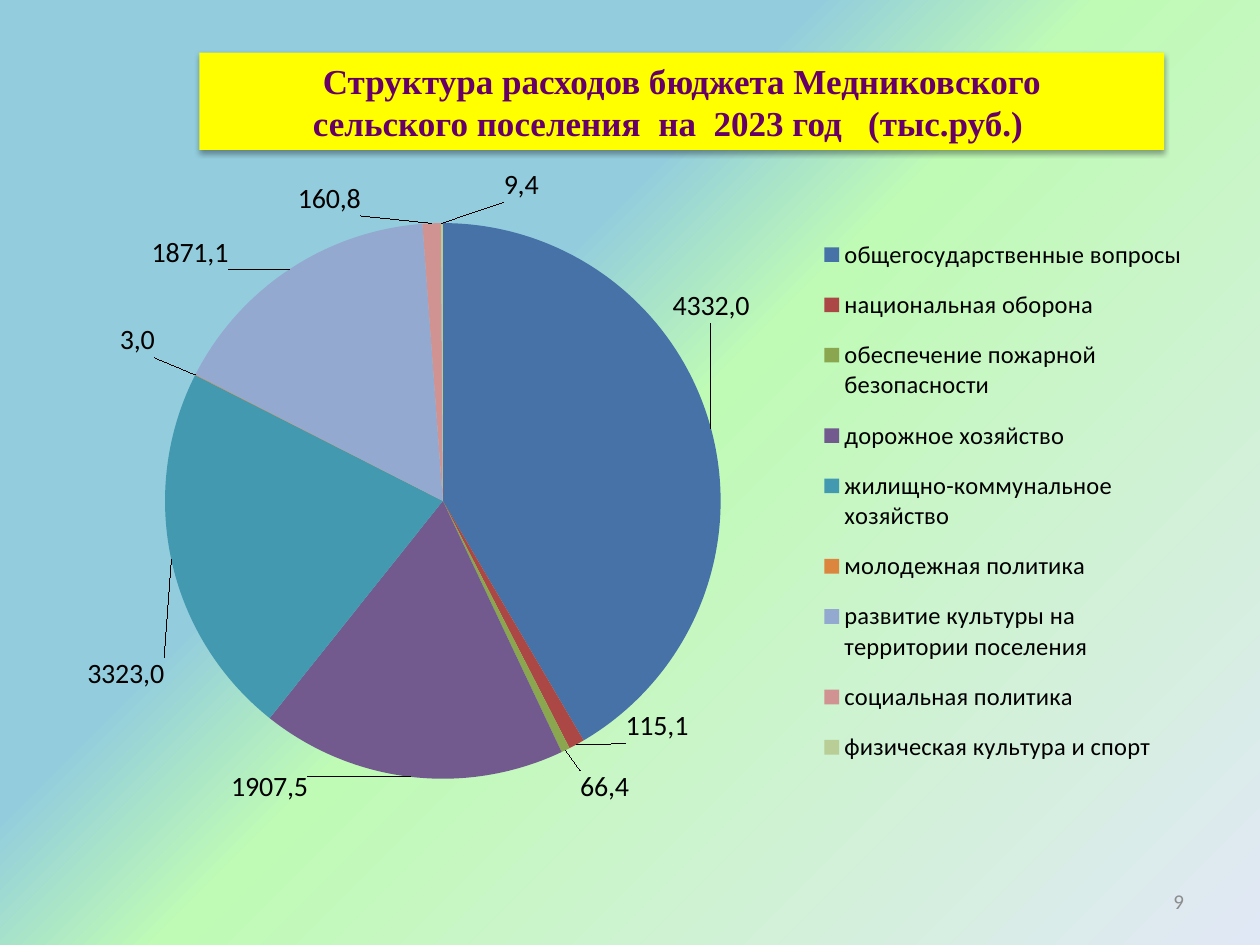
from copy import deepcopy

from lxml import etree
from pptx import Presentation
from pptx.chart.data import CategoryChartData as ChartData
from pptx.dml.color import RGBColor as RGB
from pptx.enum.chart import XL_CHART_TYPE as Kind
from pptx.enum.chart import XL_LABEL_POSITION as Spot
from pptx.enum.chart import XL_LEGEND_POSITION as Side
from pptx.enum.text import MSO_ANCHOR as Anchor
from pptx.enum.text import PP_ALIGN as Align
from pptx.oxml import parse_xml
from pptx.oxml.ns import qn
from pptx.util import Cm, Pt

BLACK = RGB(0, 0, 0)
GREY = RGB(0x8C, 0x8C, 0x8C)
YELLOW = RGB(0xFF, 0xFF, 0x00)
PLUM = RGB(0x66, 0x00, 0x66)
BACK = [
    (0.37, RGB(0x93, 0xCD, 0xDD)),
    (0.5, RGB(0xBF, 0xFB, 0xB5)),
    (1.0, RGB(0xE1, 0xE8, 0xF5)),
]

# right indent, then runs of text with extra letter spacing in points
TITLE = [
    (Cm(0), [("Структура расходов бюджета Медниковского", 0)]),
    (Cm(0.56), [("сельского поселения", 0), (" ", 5), ("на", 0), (" ", 5),
                ("2023 год", 0), (" ", 10), ("(тыс.руб.)", 0)]),
]

# name, value, label, label shift (parts of the chart), colour
SLICES = [
    ("общегосударственные вопросы", 3593.6, "4332,0", (-0.04, -0.15), RGB(0x46, 0x72, 0xA8)),
    ("национальная оборона", 79.5, "115,1", (0.04, -0.06), RGB(0xAB, 0x47, 0x44)),
    ("обеспечение пожарной безопасности", 43.6, "66,4", (0.01, 0.02), RGB(0x8A, 0xA6, 0x4F)),
    ("дорожное хозяйство", 1535, "1907,5", (-0.09, -0.02), RGB(0x72, 0x5A, 0x8F)),
    ("жилищно-коммунальное хозяйство", 1883.1, "3323,0", (0, 0.14), RGB(0x42, 0x99, 0xB0)),
    ("молодежная политика", 3, "3,0", (-0.03, -0.02), RGB(0xDC, 0x85, 0x3E)),
    ("развитие культуры на территории поселения", 1411, "1871,1", (-0.05, 0.01), RGB(0x93, 0xA9, 0xCF)),
    ("социальная политика", 92.1, "160,8", (-0.09, 0), RGB(0xD1, 0x93, 0x92)),
    ("физическая культура и спорт", 9.3, "9,4", (0.07, -0.02), RGB(0xB9, 0xCD, 0x96)),
]

SHADOW = (
    '<a:effectLst xmlns:a="http://schemas.openxmlformats.org/drawingml/2006/main">'
    '<a:outerShdw blurRad="{}" dist="{}" dir="5400000" rotWithShape="0">'
    '<a:srgbClr val="000000"><a:alpha val="35000"/></a:srgbClr>'
    "</a:outerShdw></a:effectLst>"
)


def add_run(para, text, size, font, color, bold=False):
    run = para.add_run()
    run.text = text
    run.font.size = Pt(size)
    run.font.name = font
    run.font.bold = bold
    run.font.color.rgb = color
    return run


def paint_back(slide):
    fill = slide.background.fill
    fill.gradient()
    fill.gradient_angle = 315
    last = slide.background._cSld.findall(".//" + qn("a:gs"))[-1]
    last.addnext(deepcopy(last))
    for stop, (pos, color) in zip(fill.gradient_stops, BACK):
        stop.position = pos
        stop.color.rgb = color


def add_title(slide, box):
    title = slide.shapes.title
    title.left, title.top, title.width, title.height = box
    title.fill.solid()
    title.fill.fore_color.rgb = YELLOW
    title.line.fill.background()
    title._element.spPr.append(parse_xml(SHADOW.format(Pt(3.1), Pt(1.8))))
    frame = title.text_frame
    frame.word_wrap = True
    frame.vertical_anchor = Anchor.MIDDLE
    for i, (indent, runs) in enumerate(TITLE):
        para = frame.add_paragraph() if i else frame.paragraphs[0]
        para.alignment = Align.CENTER
        para.space_before = Pt(0)
        para._p.get_or_add_pPr().set("marR", str(indent))
        for text, gap in runs:
            run = add_run(para, text, 20, "Times New Roman", PLUM, True)
            if gap:
                run._r.get_or_add_rPr().set("spc", str(gap * 100))


def set_layout(node, index, **parts):
    """Give a chart part a manual layout as its child number index."""
    for old in node.findall(qn("c:layout")):
        node.remove(old)
    layout = etree.Element(qn("c:layout"))
    manual = etree.SubElement(layout, qn("c:manualLayout"))
    for name, value in parts.items():
        etree.SubElement(manual, qn("c:" + name)).set("val", str(value))
    node.insert(index, layout)


def add_pie(slide, box):
    data = ChartData(number_format="0.0")
    data.categories = [name for name, *_ in SLICES]
    data.add_series("Series 1", [value for _, value, *_ in SLICES])
    chart = slide.shapes.add_chart(Kind.PIE, *box, data).chart
    chart.has_title = False
    chart.font.size = Pt(10)
    chart.font.name = "Calibri"
    chart.font.color.rgb = BLACK

    chart.has_legend = True
    legend = chart.legend
    legend.position = Side.RIGHT
    legend.include_in_layout = False
    legend.font.size = Pt(14)

    plot = chart.plots[0]
    plot.vary_by_categories = True
    series = plot.series[0]
    labels = series.data_labels
    labels.show_value = True
    labels.font.size = Pt(16)
    for i, (_, _, text, _, color) in enumerate(SLICES):
        point = series.points[i]
        point.format.fill.solid()
        point.format.fill.fore_color.rgb = color
        label = point.data_label
        add_run(label.text_frame.paragraphs[0], text, 16, "Calibri", BLACK)
        label.position = Spot.OUTSIDE_END

    root = chart._chartSpace
    for node, (_, _, _, (x, y), _) in zip(root.iter(qn("c:dLbl")), SLICES):
        set_layout(node, 1, x=x, y=y)
    set_layout(root.find(".//" + qn("c:plotArea")), 0, layoutTarget="inner",
               xMode="edge", yMode="edge", x=0.09, y=0.09, w=0.49, h=0.82)
    set_layout(root.find(".//" + qn("c:legend")), 1,
               xMode="edge", yMode="edge", x=0.68, y=0.09, w=0.32, h=0.82)


def add_number(slide, box):
    frame = slide.shapes.add_textbox(*box).text_frame
    frame.word_wrap = True
    frame.vertical_anchor = Anchor.MIDDLE
    para = frame.paragraphs[0]
    para.alignment = Align.RIGHT
    add_run(para, "9", 12, "Calibri", GREY)


def main():
    deck = Presentation()
    deck.slide_width, deck.slide_height = Cm(25.4), Cm(19.05)
    slide = deck.slides.add_slide(deck.slide_layouts[5])
    paint_back(slide)
    add_number(slide, (Cm(18.2), Cm(17.65), Cm(5.92), Cm(1.02)))
    add_title(slide, (Cm(4.02), Cm(1.06), Cm(19.45), Cm(1.96)))
    add_pie(slide, (Cm(1.27), Cm(3.18), Cm(22.86), Cm(13.84)))
    deck.save("out.pptx")


if __name__ == "__main__":
    main()
